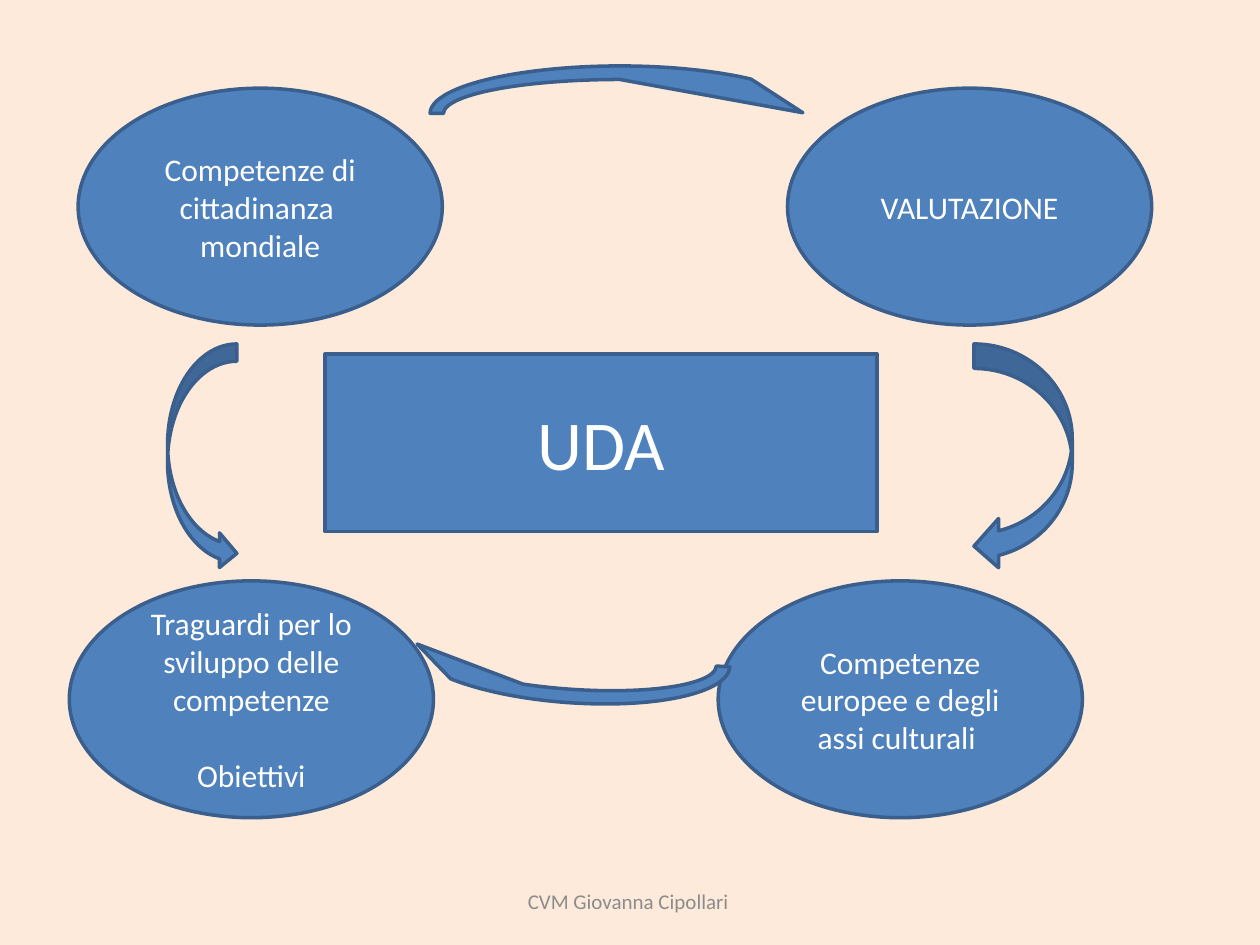
from dataclasses import dataclass

from pptx import Presentation
from pptx.dml.color import RGBColor
from pptx.enum.shapes import MSO_SHAPE
from pptx.enum.text import MSO_ANCHOR, PP_ALIGN
from pptx.shapes.autoshape import Shape
from pptx.slide import Slide
from pptx.text.text import TextFrame
from pptx.util import Emu, Pt

RECTANGLE = MSO_SHAPE.RECTANGLE
OVAL = MSO_SHAPE.OVAL
CIRCULAR_ARROW = MSO_SHAPE.CIRCULAR_ARROW
CURVED_RIGHT_ARROW = MSO_SHAPE.CURVED_RIGHT_ARROW
CURVED_LEFT_ARROW = MSO_SHAPE.CURVED_LEFT_ARROW
CENTER = PP_ALIGN.CENTER
MIDDLE = MSO_ANCHOR.MIDDLE

EMU_PER_PX = 9144
BLANK_LAYOUT = 6
FONT = "Calibri"
BACKGROUND = "FDEADA"
BLUE = "4F81BD"
DARK_BLUE = "3A5F8C"
WHITE = "FFFFFF"
GRAY = "8C8C8C"
OVAL_WIDTH, OVAL_HEIGHT = 289, 188
TOP_ROW, BOTTOM_ROW = 70, 461
ARROW_TOP, ARROW_HEIGHT = 273, 180


@dataclass(frozen=True)
class Box:
    left: int
    top: int
    width: int
    height: int


@dataclass(frozen=True)
class Topic:
    left: int
    top: int
    lines: tuple[str, ...]
    gap: int = 0


@dataclass(frozen=True)
class Arrow:
    kind: MSO_SHAPE
    box: Box
    rotation: float = 0


TOPICS = (
    Topic(62, TOP_ROW, ("Competenze di cittadinanza ", "mondiale")),
    Topic(625, TOP_ROW, ("VALUTAZIONE",)),
    Topic(55, BOTTOM_ROW,
          ("Traguardi per lo sviluppo delle competenze", " Obiettivi "), 22),
    Topic(570, BOTTOM_ROW, ("Competenze europee e degli assi culturali ",)),
)

ARROWS = (
    Arrow(CIRCULAR_ARROW, Box(336, 47, 312, 86)),
    Arrow(CURVED_RIGHT_ARROW, Box(133, ARROW_TOP, 55, ARROW_HEIGHT)),
    Arrow(CURVED_LEFT_ARROW, Box(773, ARROW_TOP, 78, ARROW_HEIGHT)),
    Arrow(CIRCULAR_ARROW, Box(320, 477, 265, 86), 184.2),
)


def px(length: int) -> Emu:
    return Emu(length * EMU_PER_PX)


def color(value: str) -> RGBColor:
    return RGBColor.from_string(value)


def position(box: Box) -> tuple[Emu, Emu, Emu, Emu]:
    return px(box.left), px(box.top), px(box.width), px(box.height)


def write(text_frame: TextFrame, lines: tuple[str, ...], size: int,
          text_color: str, gap: int = 0) -> None:
    text_frame.word_wrap = True
    text_frame.vertical_anchor = MIDDLE
    for index, line in enumerate(lines):
        paragraph = text_frame.add_paragraph() if index else text_frame.paragraphs[0]
        paragraph.text = line
        paragraph.alignment = CENTER
        paragraph.space_before = Pt(gap if index else 0)
        paragraph.font.name = FONT
        paragraph.font.size = Pt(size)
        paragraph.font.color.rgb = color(text_color)


def add_blue_shape(slide: Slide, kind: MSO_SHAPE, box: Box) -> Shape:
    shape = slide.shapes.add_shape(kind, *position(box))
    shape.shadow.inherit = False
    shape.fill.solid()
    shape.fill.fore_color.rgb = color(BLUE)
    shape.line.color.rgb = color(DARK_BLUE)
    shape.line.width = Pt(2)
    return shape


def add_topic(slide: Slide, topic: Topic) -> None:
    box = Box(topic.left, topic.top, OVAL_WIDTH, OVAL_HEIGHT)
    shape = add_blue_shape(slide, OVAL, box)
    write(shape.text_frame, topic.lines, 18, WHITE, topic.gap)


def add_arrow(slide: Slide, arrow: Arrow) -> None:
    shape = add_blue_shape(slide, arrow.kind, arrow.box)
    shape.rotation = arrow.rotation


def main() -> None:
    presentation = Presentation()
    presentation.slide_width = px(1000)
    presentation.slide_height = px(750)
    slide = presentation.slides.add_slide(presentation.slide_layouts[BLANK_LAYOUT])
    slide.background.fill.solid()
    slide.background.fill.fore_color.rgb = color(BACKGROUND)

    center = add_blue_shape(slide, RECTANGLE, Box(258, 281, 438, 141))
    write(center.text_frame, ("UDA",), 40, WHITE)
    for topic in TOPICS:
        add_topic(slide, topic)
    for arrow in ARROWS:
        add_arrow(slide, arrow)

    footer = slide.shapes.add_textbox(*position(Box(342, 695, 317, 40)))
    write(footer.text_frame, ("CVM Giovanna Cipollari ",), 12, GRAY)
    presentation.save("out.pptx")


if __name__ == "__main__":
    main()
